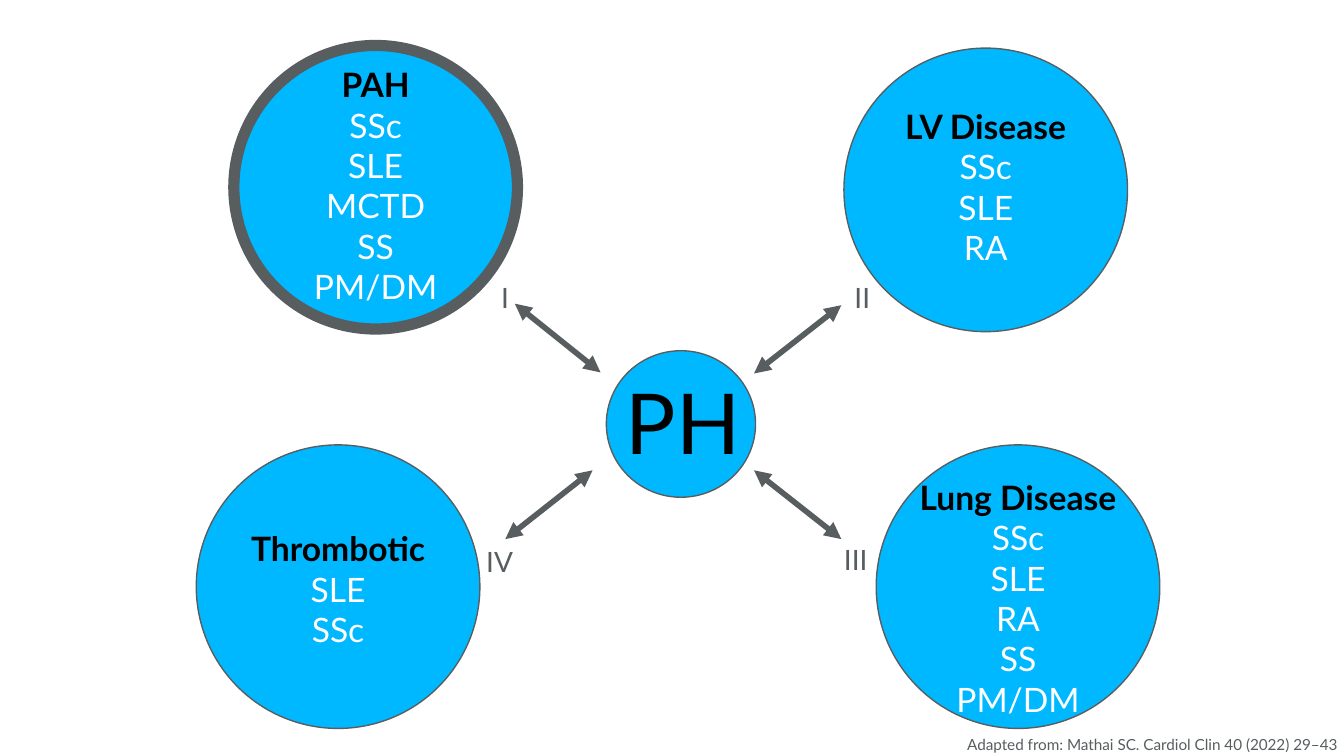
from dataclasses import dataclass

from lxml.etree import SubElement
from pptx import Presentation
from pptx.dml.color import RGBColor
from pptx.enum.shapes import MSO_CONNECTOR, MSO_SHAPE
from pptx.enum.text import MSO_AUTO_SIZE, PP_ALIGN
from pptx.oxml.ns import qn
from pptx.util import Cm, Pt

BLUE = "00B8FF"
GRAY = "585E60"
BLACK = "000000"
WHITE = "FFFFFF"
DISEASE_DIAMETER = 5.36
DISEASE_TEXT_WIDTH = 7.52
LINE_HEIGHT = 0.77
TEXT_PADDING = 0.25


@dataclass(frozen=True)
class Area:
    left: float
    top: float
    width: float
    height: float

    def lengths(self) -> list:
        return [Cm(value) for value in (self.left, self.top, self.width, self.height)]


@dataclass(frozen=True)
class TextLine:
    text: str
    size: float
    color: str = GRAY
    bold: bool = False


@dataclass(frozen=True)
class DiseaseGroup:
    title: str
    conditions: tuple
    left: float
    top: float
    text_top: float
    border: float = 0.75


@dataclass(frozen=True)
class Arrow:
    start: tuple
    end: tuple


@dataclass(frozen=True)
class Label:
    line: TextLine
    area: Area
    wrap: bool = False


DISEASES = (
    DiseaseGroup("PAH", ("SSc", "SLE", "MCTD", "SS", "PM/DM"), 4.42, 0.86, 1.09, 6),
    DiseaseGroup("LV Disease", ("SSc", "SLE", "RA"), 15.95, 0.91, 1.88),
    DiseaseGroup("Lung Disease", ("SSc", "SLE", "RA\vSS", "PM/DM"), 16.56, 8.41, 8.89),
    DiseaseGroup("Thrombotic", ("SLE", "SSc"), 3.71, 8.41, 9.86),
)

ARROWS = (
    Arrow((14.25, 7.06), (15.9, 5.77)),
    Arrow((14.25, 8.89), (15.9, 10.19)),
    Arrow((11.2, 8.89), (9.55, 10.19)),
    Arrow((9.73, 5.74), (11.35, 7.04)),
)

LABELS = (
    Label(TextLine("IV", 15), Area(8.94, 10.16, 1.02, 0.89)),
    Label(TextLine("I", 15), Area(9.22, 5.18, 0.69, 0.89)),
    Label(TextLine("II", 15), Area(15.9, 5.18, 0.81, 0.89)),
    Label(TextLine("III", 15), Area(15.7, 10.13, 1.63, 0.89), True),
    Label(
        TextLine("Adapted from: Mathai SC. Cardiol Clin 40 (2022) 29–43", 8.2),
        Area(18.03, 13.77, 7.75, 0.97),
    ),
)


def set_color(color_format, value: str) -> None:
    color_format.rgb = RGBColor.from_string(value)


def add_circle(shapes, area: Area, border: float) -> None:
    circle = shapes.add_shape(MSO_SHAPE.OVAL, *area.lengths())
    circle.shadow.inherit = False
    circle.fill.solid()
    set_color(circle.fill.fore_color, BLUE)
    set_color(circle.line.color, GRAY)
    circle.line.width = Pt(border)


def add_text(shapes, area: Area, lines: list[TextLine],
             alignment=PP_ALIGN.LEFT, wrap: bool = True) -> None:
    frame = shapes.add_textbox(*area.lengths()).text_frame
    frame.word_wrap = wrap
    frame.auto_size = MSO_AUTO_SIZE.SHAPE_TO_FIT_TEXT
    for index, line in enumerate(lines):
        para = frame.add_paragraph() if index else frame.paragraphs[0]
        para.alignment = alignment
        para.text = line.text
        font_format = {"name": "Lato", "size": Pt(line.size), "bold": line.bold}
        for span in para.runs:
            for attribute, value in font_format.items():
                setattr(span.font, attribute, value)
            set_color(span.font.color, line.color)


def add_arrow(page, arrow: Arrow) -> None:
    ends = [Cm(value) for value in (*arrow.start, *arrow.end)]
    connector = page.shapes.add_connector(MSO_CONNECTOR.STRAIGHT, *ends)
    set_color(connector.line.color, GRAY)
    connector.line.width = Pt(3)
    properties = connector.element.spPr
    outline = properties.find(qn("a:ln"))
    for tag in ("a:headEnd", "a:tailEnd"):
        SubElement(outline, qn(tag), type="triangle")
    SubElement(properties, qn("a:effectLst"))


def add_disease(page, disease: DiseaseGroup) -> None:
    shapes = page.shapes.add_group_shape().shapes
    circle = Area(disease.left, disease.top, DISEASE_DIAMETER, DISEASE_DIAMETER)
    add_circle(shapes, circle, disease.border)
    lines = [TextLine(disease.title, 18, BLACK, True)]
    lines += [TextLine(condition, 18, WHITE) for condition in disease.conditions]
    line_count = sum(len(line.text.split("\v")) for line in lines)
    text_area = Area(
        disease.left + (DISEASE_DIAMETER - DISEASE_TEXT_WIDTH) / 2,
        disease.text_top,
        DISEASE_TEXT_WIDTH,
        TEXT_PADDING + LINE_HEIGHT * line_count,
    )
    add_text(shapes, text_area, lines, PP_ALIGN.CENTER)


def add_center(page) -> None:
    shapes = page.shapes.add_group_shape().shapes
    add_circle(shapes, Area(11.46, 6.63, 2.82, 2.77), 0.75)
    add_text(shapes, Area(11.58, 6.88, 3.94, 2.18), [TextLine("PH", 45, BLACK)])


def main() -> None:
    deck = Presentation()
    deck.slide_width, deck.slide_height = Cm(25.4), Cm(14.29)
    page = deck.slides.add_slide(deck.slide_layouts[6])
    add_center(page)
    for arrow in ARROWS:
        add_arrow(page, arrow)
    for disease in DISEASES:
        add_disease(page, disease)
    for label in LABELS:
        add_text(page.shapes, label.area, [label.line], wrap=label.wrap)
    deck.save("out.pptx")


if __name__ == "__main__":
    main()
